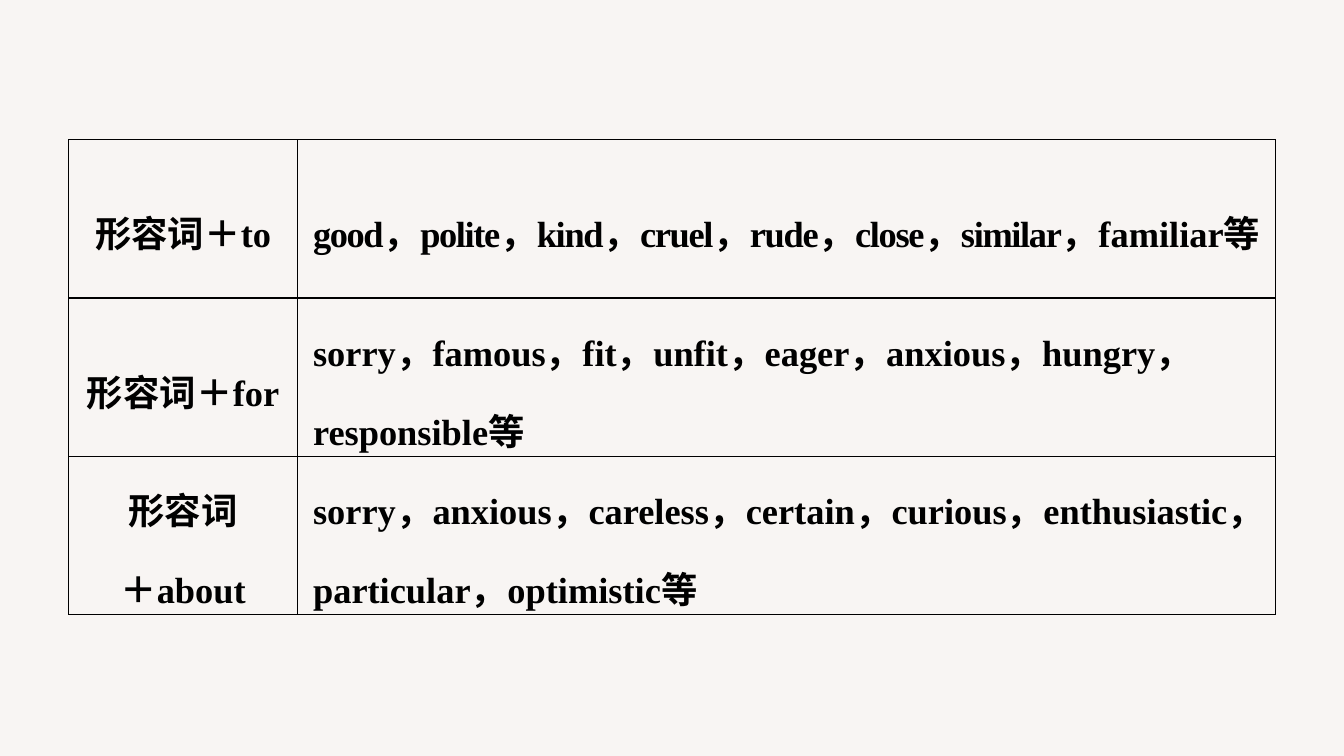
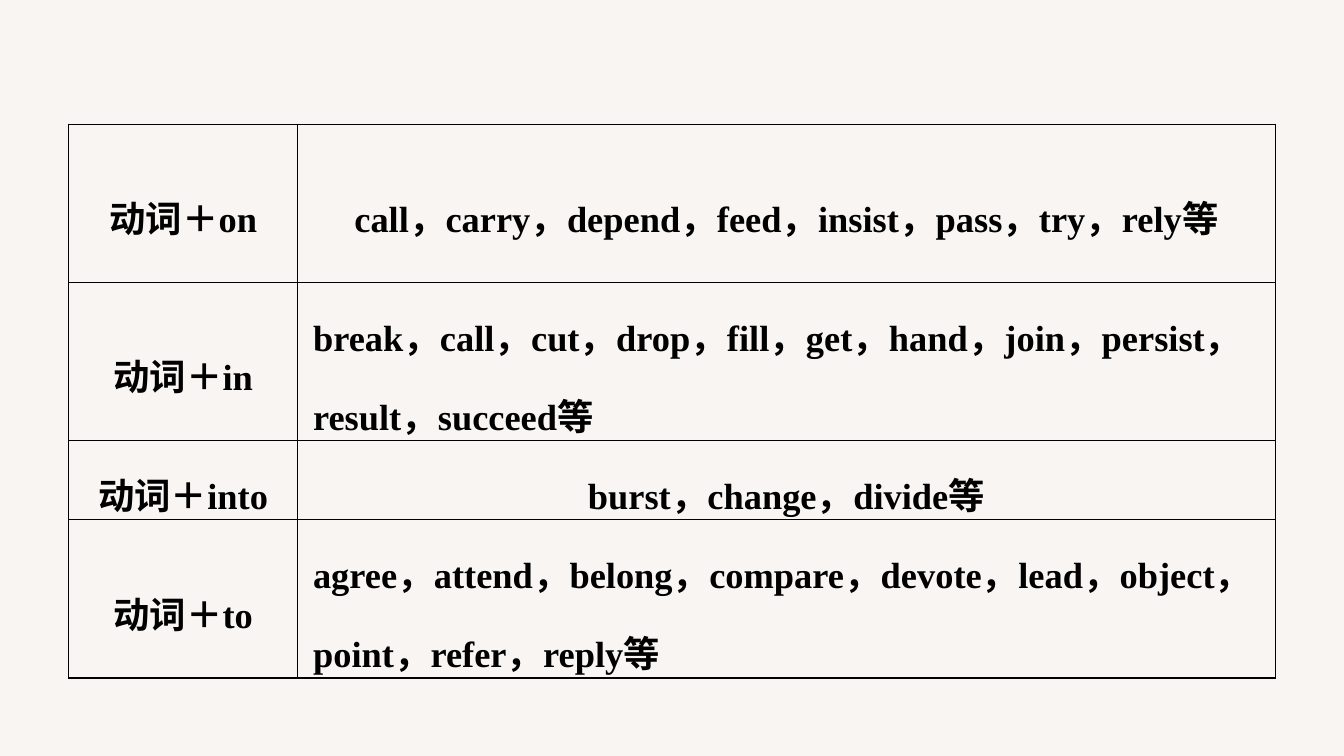
from lxml import etree
from pptx import Presentation
from pptx.dml.color import RGBColor
from pptx.enum.text import MSO_ANCHOR, PP_ALIGN
from pptx.oxml.ns import qn
from pptx.util import Cm, Pt

CENTER, LEFT = PP_ALIGN.CENTER, PP_ALIGN.LEFT
MIDDLE = MSO_ANCHOR.MIDDLE
BLACK = RGBColor(0x00, 0x00, 0x00)
CREAM = RGBColor(0xF8, 0xF5, 0xF3)
FONT = "Times New Roman"
BLANK_LAYOUT = 6
TABLE_LEFT = Cm(1.73)
COLUMN_WIDTHS = (Cm(5.77), Cm(24.64))
LINE_HEIGHT = Cm(1.99)
CELL_MARGIN = Cm(0.19)
WORD_INDENT = Cm(0.2)

ADJECTIVES = [
    (["形容词＋to"], [("good，polite，kind，cruel，rude，close，similar，", -1),
                   ("familiar等", 0)], LEFT, 2),
    (["形容词＋for"], [("sorry，famous，fit，unfit，eager，anxious，"
                    "hungry，responsible等", 0)], LEFT, 2),
    (["形容词", "＋about"], [("sorry，anxious，careless，certain，curious，"
                         "enthusiastic，particular，optimistic等", 0)], LEFT, 2),
]
VERBS = [
    (["动词＋on"], [("call，carry，depend，feed，insist，pass，try，rely等", 0)],
     CENTER, 2),
    (["动词＋in"], [("break，call，cut，drop，fill，get，hand，join，"
                  "persist，result，succeed等", 0)], LEFT, 2),
    (["动词＋into"], [("burst，change，divide等", 0)], CENTER, 1),
    (["动词＋to"], [("agree，attend，belong，compare，devote，lead，"
                  "object，point，refer，reply等", 0)], LEFT, 2),
]


def add_run(p, text, size=26, bold=True, color=BLACK, spacing=0):
    r = p.add_run()
    r.text = text
    r.font.name = FONT
    r.font.size = Pt(size)
    r.font.bold = bold
    r.font.color.rgb = color
    if spacing:
        r._r.get_or_add_rPr().set("spc", str(spacing * 100))


def set_borders(cell, color=BLACK, width=Pt(1)):
    tcPr = cell._tc.get_or_add_tcPr()
    for side in ("lnL", "lnR", "lnT", "lnB"):
        ln = etree.SubElement(tcPr, qn(f"a:{side}"), w=str(width))
        fill = etree.SubElement(ln, qn("a:solidFill"))
        etree.SubElement(fill, qn("a:srgbClr"), val=str(color))


def fill_cell(cell, paragraphs, align):
    set_borders(cell)
    cell.fill.background()
    cell.vertical_anchor = MIDDLE
    cell.margin_left = cell.margin_right = CELL_MARGIN
    cell.margin_top = cell.margin_bottom = 0
    tf = cell.text_frame
    for i, runs in enumerate(paragraphs):
        p = tf.add_paragraph() if i else tf.paragraphs[0]
        p.alignment = align
        p.line_spacing = 1.5
        if align == LEFT:
            p._p.get_or_add_pPr().set("marL", str(WORD_INDENT))
        for text, spacing in runs:
            add_run(p, text, spacing=spacing)


def add_word_table(prs, entries, top):
    s = prs.slides.add_slide(prs.slide_layouts[BLANK_LAYOUT])
    height = LINE_HEIGHT * sum(lines for *_, lines in entries)
    table = s.shapes.add_table(len(entries), len(COLUMN_WIDTHS), TABLE_LEFT,
                               top, sum(COLUMN_WIDTHS), height).table
    table.first_row = table.horz_banding = False
    for column, width in zip(table.columns, COLUMN_WIDTHS):
        column.width = width
    for i, (label, words, align, lines) in enumerate(entries):
        table.rows[i].height = LINE_HEIGHT * lines
        fill_cell(table.cell(i, 0), [[(text, 0)] for text in label], CENTER)
        fill_cell(table.cell(i, 1), [words], align)


def main():
    prs = Presentation()
    prs.slide_width, prs.slide_height = Cm(33.87), Cm(19.05)
    background = prs.slide_master.background.fill
    background.solid()
    background.fore_color.rgb = CREAM
    add_word_table(prs, ADJECTIVES, Cm(3.52))
    add_word_table(prs, VERBS, Cm(3.13))
    prs.save("out.pptx")


if __name__ == "__main__":
    main()
